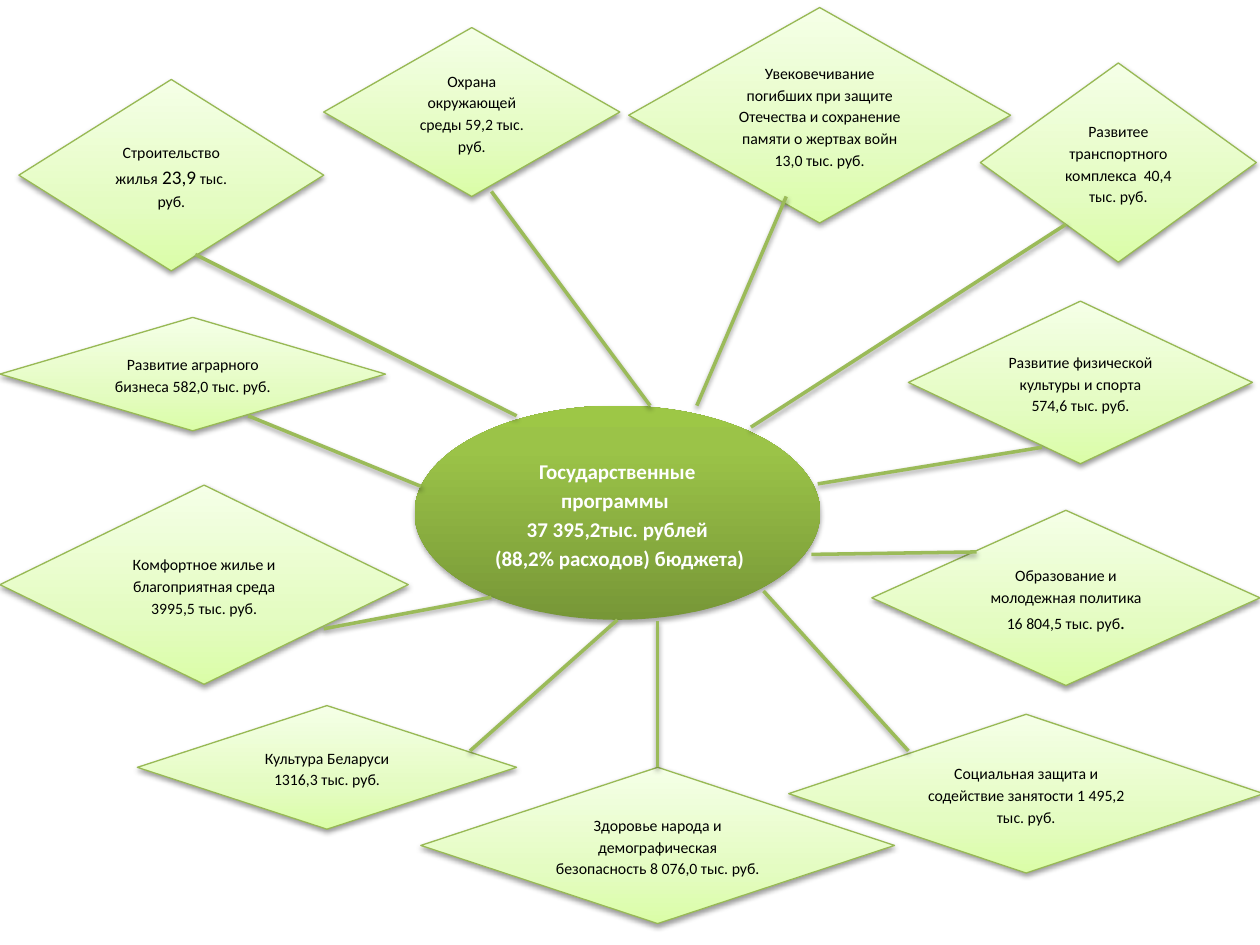
import copy
from dataclasses import dataclass

import lxml.etree
import pptx
import pptx.dml.color
import pptx.enum.shapes
import pptx.enum.text
import pptx.oxml.ns
import pptx.util

Pt = pptx.util.Pt
RGB = pptx.dml.color.RGBColor.from_string
SHAPES = pptx.enum.shapes.MSO_SHAPE
qn = pptx.oxml.ns.qn


@dataclass(frozen=True)
class Theme:
    font: str = "Calibri"
    center_size: float = 12
    program_size: float = 9
    accent_size: float = 11
    line_spacing: float = 1.15
    center_text: str = "FFFFFF"
    program_text: str = "000000"
    outline: str = "98B955"
    spoke: str = "9BBB59"
    # Gradient stops run from the bottom edge to the top edge
    center_fill: tuple = ((0, "779737"), (0.8, "9BC348"), (1, "9DC746"))
    program_fill: tuple = ((0, "DAFDA7"), (0.35, "E4FCC2"), (1, "F5FFE7"))
    # Shadow opacity in percent and distance in points
    center_shadow: tuple = (35, 1.8)
    program_shadow: tuple = (38, 1.6)


THEME = Theme()
SMALL, LARGE = THEME.program_size, THEME.accent_size

CENTER_BOX = (236.9, 231.8, 231.8, 122.4)
CENTER_LINES = ("Государственные программы ", "37 395,2тыс. рублей", " (88,2% расходов) бюджета)")

# Each program: box, space after, runs, spoke start and spoke end
PROGRAMS = [
    ((359.3, 4.3, 218.2, 123.1), 0,
     [("Увековечивание погибших при защите Отечества и сохранение памяти о жертвах войн "
       "13,0 тыс. руб.", SMALL)], (398.2, 231.8), (449.3, 112.3)),
    ((185, 15.8, 169.2, 96.5), 10,
     [("Охрана окружающей среды 59,2 тыс. руб.", SMALL)], (371.5, 231.8), (280.8, 109.4)),
    ((10.8, 45.4, 174.2, 109.4), 0,
     [("Строительство жилья", SMALL), (" 23,9", LARGE), (" тыс.", SMALL), (" ", LARGE),
      ("руб.", SMALL)], (295.2, 237.6), (111.6, 145.4)),
    ((560.2, 36, 157.7, 113.8), 10,
     [("Развитее транспортного комплекса  40,4 тыс. руб.", SMALL)],
     (609.1, 128.2), (429.1, 244.1)),
    ((519.1, 172.1, 196.6, 92.9), 10,
     [("Развитие физической культуры и спорта 574,6 тыс. руб.", SMALL)],
     (595.4, 255.6), (467.3, 276.5)),
    ((498.2, 291.6, 221.8, 100.1), 10,
     [("Образование и молодежная политика 16 804,5 тыс. руб", SMALL), (".", LARGE)],
     (558, 315.4), (463.7, 316.8)),
    ((450.7, 408.2, 271.4, 90.7), 10,
     [("Социальная защита и содействие занятости 1 495,2 тыс. руб.", SMALL)],
     (436.3, 337.7), (519.1, 429.1)),
    ((240.5, 438.5, 270.7, 89.3), 10,
     [("Здоровье народа и демографическая безопасность 8 076,0 тыс. руб.", SMALL)],
     (375.8, 355), (375.8, 438.5)),
    ((78.5, 403.2, 216.7, 70.6), 10,
     [("Культура Беларуси 1316,3 тыс. руб.", SMALL)], (352.8, 354.2), (268.6, 429.1)),
    ((0, 181.4, 220.3, 64.8), 10,
     [("Развитие аграрного бизнеса 582,0 тыс. руб.", SMALL)], (240.5, 277.9), (141.8, 237.6)),
    ((0, 277.2, 233.3, 113.8), 10,
     [("Комфортное жилье и благоприятная среда 3995,5 тыс. руб.", SMALL)],
     (280.8, 341.3), (185, 359.3)),
]


def add_shadow(shape, opacity, distance):
    """Add a soft shadow below a shape or connector whose line is already set."""
    properties = shape._element.spPr
    effects = properties.find(qn("a:effectLst"))
    if effects is None:
        effects = lxml.etree.SubElement(properties, qn("a:effectLst"))
    shadow = lxml.etree.SubElement(
        effects, qn("a:outerShdw"), blurRad=str(Pt(3.1)), dist=str(Pt(distance)),
        dir="5400000", rotWithShape="0")
    color = lxml.etree.SubElement(shadow, qn("a:srgbClr"), val="000000")
    lxml.etree.SubElement(color, qn("a:alpha"), val=str(opacity * 1000))


def fill_gradient(shape, stops):
    shape.fill.gradient()
    shape.fill.gradient_angle = 90
    stop_list = shape._element.spPr.find(".//" + qn("a:gsLst"))
    while len(stop_list) < len(stops):
        stop_list.append(copy.deepcopy(stop_list[0]))
    for stop, (position, color) in zip(shape.fill.gradient_stops, stops):
        stop.position = position
        stop.color.rgb = RGB(color)


def add_node(slide, kind, box, stops, outline, shadow):
    shape = slide.shapes.add_shape(kind, *map(Pt, box))
    fill_gradient(shape, stops)
    if outline:
        shape.line.color.rgb = RGB(outline)
        shape.line.width = Pt(0.75)
    else:
        shape.line.fill.background()
    shape.shadow.inherit = False
    add_shadow(shape, *shadow)
    shape.text_frame.word_wrap = True
    shape.text_frame.vertical_anchor = pptx.enum.text.MSO_ANCHOR.MIDDLE
    return shape


def write_paragraph(paragraph, runs, color, bold=False, space_after=0):
    paragraph.alignment = pptx.enum.text.PP_ALIGN.CENTER
    paragraph.line_spacing = THEME.line_spacing
    paragraph.space_after = Pt(space_after)
    for text, size in runs:
        run = paragraph.add_run()
        run.text = text
        run.font.name = THEME.font
        run.font.size = Pt(size)
        run.font.bold = bold
        run.font.color.rgb = RGB(color)


def add_center(slide, box, lines):
    shape = add_node(slide, SHAPES.OVAL, box, THEME.center_fill, None, THEME.center_shadow)
    frame = shape.text_frame
    for index, line in enumerate(lines):
        paragraph = frame.add_paragraph() if index else frame.paragraphs[0]
        write_paragraph(paragraph, [(line, THEME.center_size)], THEME.center_text, bold=True)


def add_program(slide, box, space_after, runs):
    shape = add_node(slide, SHAPES.FLOWCHART_DECISION, box, THEME.program_fill,
                     THEME.outline, THEME.program_shadow)
    write_paragraph(shape.text_frame.paragraphs[0], runs, THEME.program_text,
                    space_after=space_after)


def add_spoke(slide, start, end):
    connector = slide.shapes.add_connector(
        pptx.enum.shapes.MSO_CONNECTOR.STRAIGHT, *map(Pt, start + end))
    connector.line.color.rgb = RGB(THEME.spoke)
    connector.line.width = Pt(2)
    add_shadow(connector, *THEME.program_shadow)


def main():
    presentation = pptx.Presentation()
    presentation.slide_width, presentation.slide_height = Pt(720), Pt(540)
    slide = presentation.slides.add_slide(presentation.slide_layouts[6])

    # Hub and the programs around it
    add_center(slide, CENTER_BOX, CENTER_LINES)
    for box, space_after, runs, *_ in PROGRAMS:
        add_program(slide, box, space_after, runs)

    # Spokes lie in front of the shapes
    for *_, start, end in PROGRAMS:
        add_spoke(slide, start, end)

    presentation.save("out.pptx")


if __name__ == "__main__":
    main()
